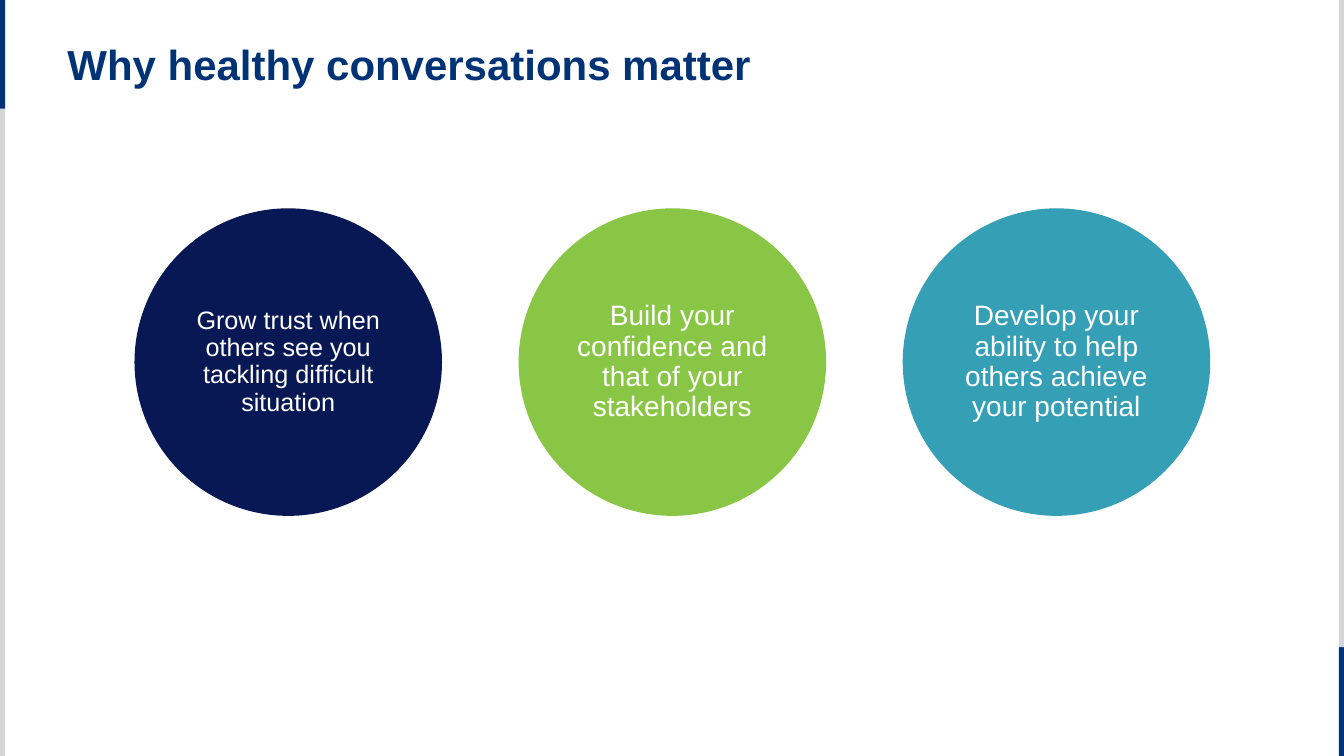
from pptx import Presentation
from pptx.dml.color import RGBColor
from pptx.enum.shapes import MSO_SHAPE
from pptx.enum.text import MSO_ANCHOR, PP_ALIGN
from pptx.util import Cm, Pt

RECTANGLE, OVAL = MSO_SHAPE.RECTANGLE, MSO_SHAPE.OVAL
MIDDLE = MSO_ANCHOR.MIDDLE
LEFT, CENTER = PP_ALIGN.LEFT, PP_ALIGN.CENTER

BLUE = RGBColor(0x00, 0x33, 0x75)
GREY = RGBColor(0xD1, 0xD5, 0xD8)
NAVY = RGBColor(0x08, 0x18, 0x54)
GREEN = RGBColor(0x8A, 0xC6, 0x46)
TEAL = RGBColor(0x35, 0x9F, 0xB5)
WHITE = RGBColor(0xFF, 0xFF, 0xFF)

SLIDE_W, SLIDE_H = Cm(33.87), Cm(19.05)
BAR_W, ACCENT_H = Cm(0.13), Cm(2.74)
CIRCLE_LEFT, CIRCLE_TOP = Cm(3.39), Cm(5.25)
CIRCLE_SIZE, CIRCLE_STEP = Cm(7.75), Cm(9.68)

REASONS = [
    ("Grow trust when others see you tackling difficult situation", NAVY, 18),
    ("Build your confidence and that of your stakeholders", GREEN, 20),
    ("Develop your ability to help others achieve your potential", TEAL, 20),
]


def add_filled_shape(s, kind, left, top, width, height, color):
    """Add a plain filled shape without outline or shadow."""
    sp = s.shapes.add_shape(kind, left, top, width, height)
    sp.shadow.inherit = False
    sp.fill.solid()
    sp.fill.fore_color.rgb = color
    sp.line.fill.background()
    return sp


def set_text(sp, text, size, color, align, bold=False):
    """Write one formatted paragraph into a shape."""
    tf = sp.text_frame
    tf.text = text
    tf.word_wrap = True
    tf.vertical_anchor = MIDDLE
    p = tf.paragraphs[0]
    p.alignment = align
    p.line_spacing = 0.9
    p.space_before = Pt(0)
    font = p.runs[0].font
    font.name = "Arial"
    font.size = Pt(size)
    font.bold = bold
    font.color.rgb = color


def add_side_bars(s):
    """Add the grey edge bars with their blue accents."""
    grey_h = SLIDE_H - ACCENT_H
    right = SLIDE_W - BAR_W
    for left, top, height, color in [
        (right, grey_h, ACCENT_H, BLUE),
        (right, 0, grey_h, GREY),
        (0, ACCENT_H, grey_h, GREY),
        (0, 0, ACCENT_H, BLUE),
    ]:
        add_filled_shape(s, RECTANGLE, left, top, BAR_W, height, color)


def add_title(s, text):
    """Place and format the title placeholder."""
    sp = s.shapes.title
    sp.left, sp.top, sp.width, sp.height = Cm(1.7), Cm(0.97), Cm(29.85), Cm(1.42)
    sp.text_frame.margin_left = sp.text_frame.margin_right = 0
    set_text(sp, text, 30, BLUE, LEFT, bold=True)


def add_reason(s, index, text, color, size):
    """Add one circle of the row with its reason."""
    left = CIRCLE_LEFT + index * CIRCLE_STEP
    sp = add_filled_shape(s, OVAL, left, CIRCLE_TOP, CIRCLE_SIZE, CIRCLE_SIZE, color)
    set_text(sp, text, size, WHITE, CENTER)
    sp.text_frame.paragraphs[0].space_after = Pt(6)


def main():
    """Build the slide and save it."""
    prs = Presentation()
    prs.slide_width, prs.slide_height = SLIDE_W, SLIDE_H
    s = prs.slides.add_slide(prs.slide_layouts[5])
    add_side_bars(s)
    add_title(s, "Why healthy conversations matter")
    for index, (text, color, size) in enumerate(REASONS):
        add_reason(s, index, text, color, size)
    prs.save("out.pptx")


if __name__ == "__main__":
    main()
